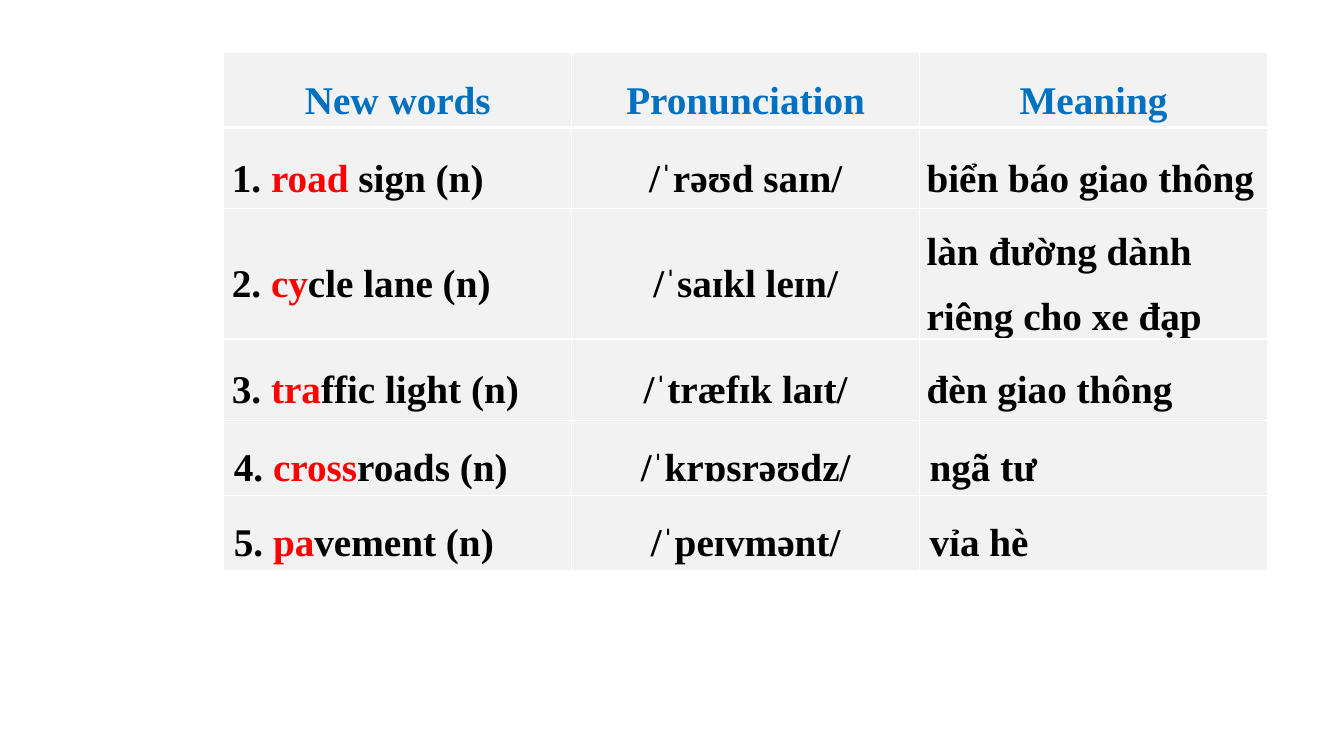
import pptx
import pptx.util
import pptx.dml.color
import pptx.enum.text
import lxml.etree
from dataclasses import dataclass

Inches = pptx.util.Inches
Pt = pptx.util.Pt
Align = pptx.enum.text.PP_ALIGN
Anchor = pptx.enum.text.MSO_ANCHOR


@dataclass
class Theme:
    font: str = "Times New Roman"
    size: int = 28
    line_spacing: float = 1.5
    heading: str = "0070C0"
    text: str = "000000"
    stress: str = "FF0000"
    fill: str = "F2F2F2"
    border: str = "FFFFFF"
    thin: int = 1
    thick: int = 3


HEADINGS = ["New words", "Pronunciation", "Meaning"]
WORDS = [
    ("1. ", "road ", "sign (n)", "/ˈrəʊd saɪn/", "biển báo giao thông"),
    ("2. ", "cy", "cle lane (n)", "/ˈsaɪkl leɪn/", "làn đường dành riêng cho xe đạp"),
    ("3. ", "tra", "ffic light (n)", "/ˈtræfɪk laɪt/", "đèn giao thông"),
    ("4. ", "cross", "roads (n)", "/ˈkrɒsrəʊdz/", "ngã tư"),
    ("5. ", "pa", "vement (n)", "/ˈpeɪvmənt/", "vỉa hè"),
]
ROW_HEIGHTS = [0.74, 0.79, 1.29, 0.79, 0.74, 0.74]
COLUMN_WIDTH = 3.45
COMPACT_ROWS = (1, 2, 3)


class SlideBuilder:
    def __init__(self, slide, theme):
        self.slide = slide
        self.theme = theme

    def table(self, left, top, column_width, row_heights, columns):
        frame = self.slide.shapes.add_table(
            len(row_heights), columns, Inches(left), Inches(top),
            Inches(column_width * columns), Inches(sum(row_heights)))
        for column in frame.table.columns:
            column.width = Inches(column_width)
        for row, height in zip(frame.table.rows, row_heights):
            row.height = Inches(height)
        return frame.table

    def cell(self, cell, spans, align, top_border, bottom_border):
        thin = self.theme.thin
        self.borders(cell, {"L": thin, "R": thin, "T": top_border, "B": bottom_border})
        cell.fill.solid()
        cell.fill.fore_color.rgb = pptx.dml.color.RGBColor.from_string(self.theme.fill)
        para = cell.text_frame.paragraphs[0]
        para.alignment = align
        para.line_spacing = self.theme.line_spacing
        for text, color in spans:
            span = para.add_run()
            span.text = text
            span.font.name = self.theme.font
            span.font.size = Pt(self.theme.size)
            span.font.bold = True
            span.font.color.rgb = pptx.dml.color.RGBColor.from_string(color)

    def borders(self, cell, widths):
        properties = cell._tc.get_or_add_tcPr()
        qn = pptx.oxml.ns.qn
        for side, width in widths.items():
            line = lxml.etree.SubElement(properties, qn("a:ln" + side), w=str(Pt(width)))
            solid = lxml.etree.SubElement(line, qn("a:solidFill"))
            lxml.etree.SubElement(solid, qn("a:srgbClr"), val=self.theme.border)

    def compact(self, cell, horizontal, vertical):
        cell.vertical_anchor = Anchor.MIDDLE
        cell.margin_left = cell.margin_right = Inches(horizontal)
        cell.margin_top = cell.margin_bottom = Inches(vertical)


def main():
    deck = pptx.Presentation()
    deck.slide_width = Inches(13.33)
    deck.slide_height = Inches(7.5)
    theme = Theme()
    builder = SlideBuilder(deck.slides.add_slide(deck.slide_layouts[6]), theme)
    vocabulary = builder.table(2.22, 0.52, COLUMN_WIDTH, ROW_HEIGHTS, len(HEADINGS))

    for column, heading in enumerate(HEADINGS):
        builder.cell(vocabulary.cell(0, column), [(heading, theme.heading)],
                     Align.CENTER, theme.thin, theme.thick)

    for row, (number, stressed, rest, sound, meaning) in enumerate(WORDS, 1):
        contents = [
            ([(number, theme.text), (stressed, theme.stress), (rest, theme.text)], Align.LEFT),
            ([(sound, theme.text)], Align.CENTER),
            ([(meaning, theme.text)], Align.LEFT),
        ]
        top_border = theme.thick if row == 1 else theme.thin
        for column, (spans, align) in enumerate(contents):
            cell = vocabulary.cell(row, column)
            builder.cell(cell, spans, align, top_border, theme.thin)
            if row in COMPACT_ROWS:
                margins = (0.08, 0.08) if column == 0 else (0.07, 0)
                builder.compact(cell, *margins)

    deck.save("out.pptx")


if __name__ == "__main__":
    main()
